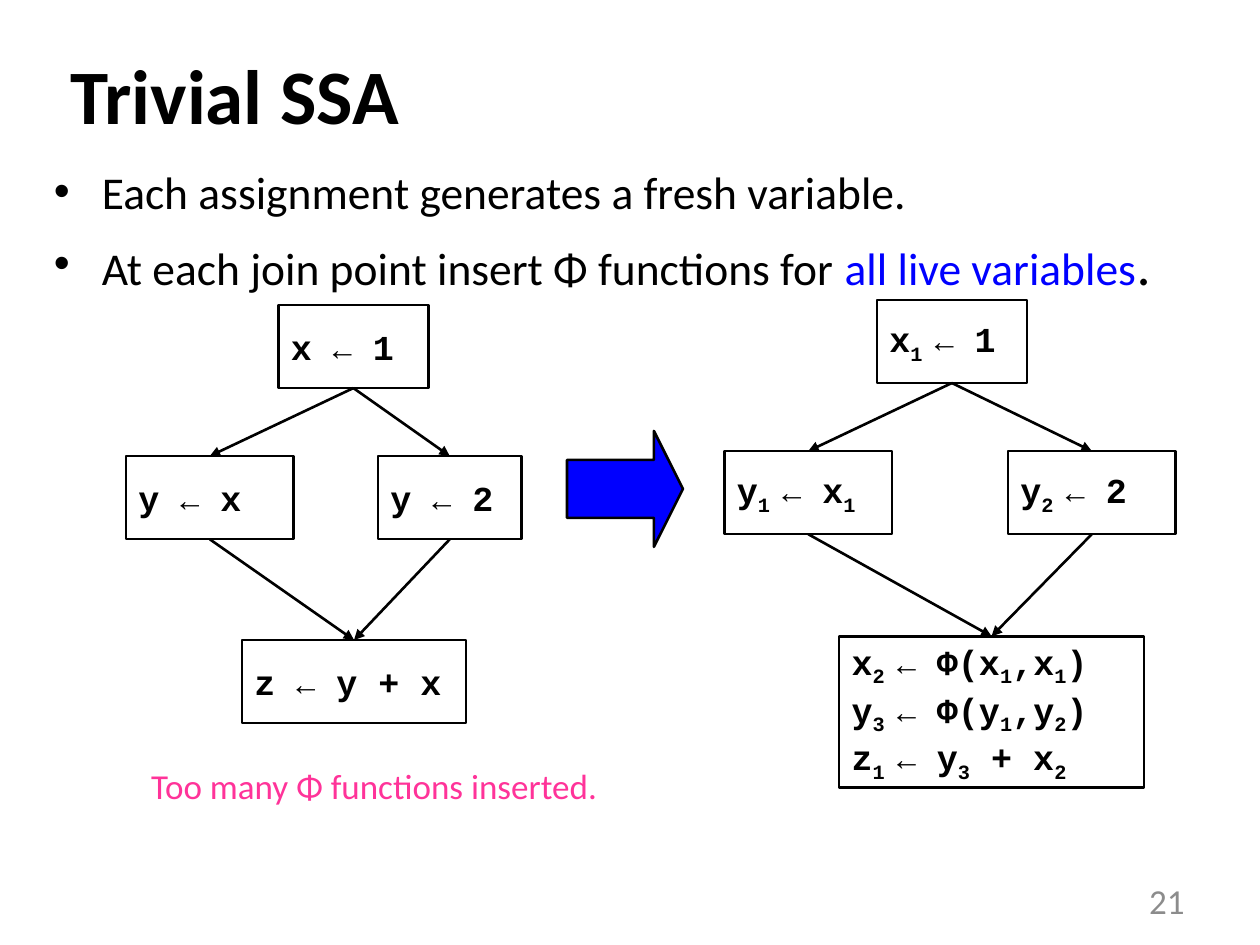
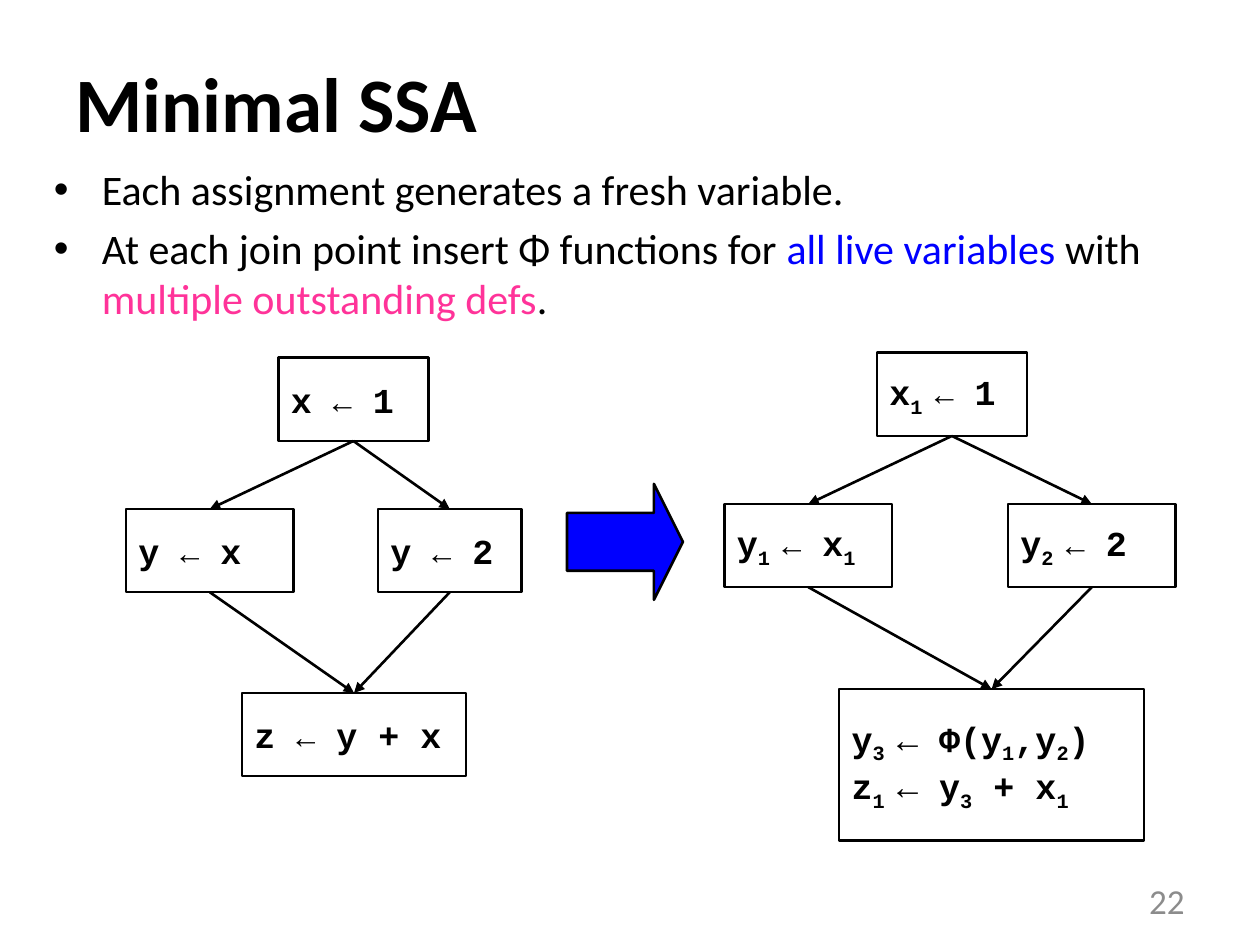
from dataclasses import dataclass

from lxml import etree
from pptx import Presentation
from pptx.dml.color import RGBColor
from pptx.enum import shapes, text
from pptx.oxml import ns
from pptx.util import Inches, Pt


@dataclass(frozen=True)
class Theme:
    sans: str = "Calibri"
    mono: str = "Courier New"
    black: str = "000000"
    blue: str = "0000FF"
    pink: str = "FF3399"
    grey: str = "8C8C8C"
    title_size: int = 44
    note_size: int = 20
    code_size: int = 20
    small_arrow: int = 18
    line_width: float = 1.5


THEME = Theme()

# A bullet is a list of runs: (text, colour, size or None for the slide's size).
FRESH = [("Each assignment generates a fresh variable.", THEME.black, None)]
INSERT = ("At each join point insert Φ functions for ", THEME.black, None)

SLIDES = [
    {
        "title": "Trivial SSA", "title_at": (0.46, 0.12), "number": 21,
        "bullet_size": 26,
        "bullets": [FRESH, [INSERT, ("all live variables", THEME.blue, None),
                            (".", THEME.black, 32)]],
        "drop": 0,
        "join": ["x_2 _← Φ(x_1_,x_1_)", "y_3 _← Φ(y_1_,y_2_)", "z_1 _← y_3_ + x_2"],
        "join_arrow": THEME.small_arrow,
        "caption": "Too many Φ functions inserted.",
    },
    {
        "title": "Minimal SSA", "title_at": (0.5, 0.18), "number": 22,
        "bullet_size": 24,
        "bullets": [FRESH, [INSERT, ("all live variables ", THEME.blue, None),
                            ("with ", THEME.black, None),
                            ("multiple outstanding defs", THEME.pink, None),
                            (".", THEME.black, None)]],
        "drop": 0.42,
        "join": ["y_3 _← Φ(y_1_,y_2_)", "z_1 _← y_3_ + x_1"],
        "join_arrow": THEME.code_size,
        "caption": None,
    },
]

# Flow graph blocks: lines of code, left, top, width, height.
# Underscores switch subscript on and off.
BLOCK_HEIGHT = 0.66
BEFORE = {
    "entry": (["x ← 1"], 2.21, 2.42, 1.19, BLOCK_HEIGHT),
    "left": (["y ← x"], 1, 3.62, 1.33, BLOCK_HEIGHT),
    "right": (["y ← 2"], 3, 3.62, 1.14, BLOCK_HEIGHT),
    "join": (["z ← y + x"], 1.92, 5.08, 1.78, BLOCK_HEIGHT),
}
AFTER = {
    "entry": (["x_1 _← 1"], 6.96, 2.38, 1.19, BLOCK_HEIGHT),
    "left": (["y_1 _← x_1"], 5.75, 3.58, 1.33, BLOCK_HEIGHT),
    "right": (["y_2 _← 2"], 8, 3.58, 1.33, BLOCK_HEIGHT),
}
JOIN_AFTER = (6.66, 5.05, 2.42, 1.2)
EDGES = [("entry", "left"), ("entry", "right"), ("right", "join"), ("left", "join")]
TOP, BOTTOM = 0, 2


def inches(*lengths):
    return [Inches(length) for length in lengths]


def add_xml(parent, tag, **attributes):
    return etree.SubElement(parent, ns.qn(tag), attributes)


def style(font, name, size, colour, bold=False):
    font.name, font.size, font.bold = name, Pt(size), bold
    font.color.rgb = RGBColor.from_string(colour)


def paragraphs_for(frame, items):
    """Yield each item with its own paragraph, using the empty first one."""
    for index, item in enumerate(items):
        yield frame.paragraphs[0] if index == 0 else frame.add_paragraph(), item


def add_text(slide, box, content, size, colour, bold=False, middle=True):
    """Add a wrapping one-paragraph text box."""
    frame = slide.shapes.add_textbox(*inches(*box)).text_frame
    frame.word_wrap = True
    if middle:
        frame.vertical_anchor = text.MSO_ANCHOR.MIDDLE
    paragraph = frame.paragraphs[0]
    paragraph.text = content
    style(paragraph.font, THEME.sans, size, colour, bold)
    return frame


def add_bullets(slide, bullets, size):
    frame = slide.shapes.add_textbox(*inches(0.33, 1.25, 9.33, 1.58)).text_frame
    frame.word_wrap = True
    indent = Inches(0.38)
    for paragraph, runs in paragraphs_for(frame, bullets):
        properties = paragraph._p.get_or_add_pPr()
        properties.set("marL", str(indent))
        properties.set("indent", str(-indent))
        add_xml(add_xml(properties, "a:spcBef"), "a:spcPct", val="20000")
        add_xml(properties, "a:buFont", typeface="Arial")
        add_xml(properties, "a:buChar", char="•")
        style(paragraph.font, THEME.sans, size, THEME.black)
        for content, colour, run_size in runs:
            run = paragraph.add_run()
            run.text = content
            run.font.color.rgb = RGBColor.from_string(colour)
            if run_size:
                run.font.size = Pt(run_size)


def add_code(paragraph, code, arrow_size):
    style(paragraph.font, THEME.mono, THEME.code_size, THEME.black, bold=True)
    for index, part in enumerate(code.split("_")):
        before, arrow, after = part.partition("←")
        for piece in filter(None, (before, arrow, after)):
            run = paragraph.add_run()
            run.text = piece
            if piece == "←":
                run.font.size = Pt(arrow_size)
            if index % 2:
                run._r.get_or_add_rPr().set("baseline", "-25000")


def outline(line):
    line.color.rgb = RGBColor.from_string(THEME.black)
    line.width = Pt(THEME.line_width)


def add_outlined(slide, kind, box):
    shape = slide.shapes.add_shape(kind, *inches(*box))
    shape.shadow.inherit = False
    outline(shape.line)
    return shape


def add_block(slide, lines, box, arrow_size):
    shape = add_outlined(slide, shapes.MSO_SHAPE.RECTANGLE, box)
    shape.fill.background()
    frame = shape.text_frame
    frame.word_wrap = False
    frame.vertical_anchor = text.MSO_ANCHOR.MIDDLE
    for paragraph, code in paragraphs_for(frame, lines):
        paragraph.alignment = text.PP_ALIGN.LEFT
        add_code(paragraph, code, arrow_size)
    return shape


def add_edge(slide, start, end):
    connector = slide.shapes.add_connector(shapes.MSO_CONNECTOR.STRAIGHT, 0, 0, 0, 0)
    connector.begin_connect(start, BOTTOM)
    connector.end_connect(end, TOP)
    outline(connector.line)
    add_xml(connector.line._get_or_add_ln(), "a:tailEnd", type="triangle")
    add_xml(connector.element.spPr, "a:effectLst")


def add_flow_graph(slide, blocks, drop, join_arrow):
    nodes = {}
    for name, (lines, left, top, width, height) in blocks.items():
        arrow_size = join_arrow if name == "join" else THEME.small_arrow
        nodes[name] = add_block(slide, lines, (left, top + drop, width, height), arrow_size)
    for start, end in EDGES:
        add_edge(slide, nodes[start], nodes[end])


def add_big_arrow(slide, drop):
    arrow = add_outlined(slide, shapes.MSO_SHAPE.RIGHT_ARROW, (4.5, 3.42 + drop, 0.92, 0.92))
    arrow.adjustments[0], arrow.adjustments[1] = 0.5, 0.25
    arrow.fill.solid()
    arrow.fill.fore_color.rgb = RGBColor.from_string(THEME.blue)


def add_caption(slide, content):
    frame = add_text(slide, (1, 5.92, 5.33, 0.64), content, THEME.note_size,
                     THEME.pink, middle=False)
    frame.margin_left = frame.margin_right = Inches(0.2)
    frame.margin_top = frame.margin_bottom = Inches(0.15)


def build_slide(presentation, content):
    slide = presentation.slides.add_slide(presentation.slide_layouts[6])
    number = add_text(slide, (7.17, 6.95, 2.33, 0.4), str(content["number"]),
                      THEME.note_size, THEME.grey)
    number.paragraphs[0].alignment = text.PP_ALIGN.RIGHT
    add_text(slide, (*content["title_at"], 9, 1.25), content["title"],
             THEME.title_size, THEME.black, bold=True)
    add_bullets(slide, content["bullets"], content["bullet_size"])

    drop = content["drop"]
    after = {**AFTER, "join": (content["join"], *JOIN_AFTER)}
    add_flow_graph(slide, BEFORE, drop, THEME.small_arrow)
    add_flow_graph(slide, after, drop, content["join_arrow"])
    add_big_arrow(slide, drop)
    if content["caption"]:
        add_caption(slide, content["caption"])


def main():
    presentation = Presentation()
    presentation.slide_width, presentation.slide_height = inches(10, 7.5)
    for content in SLIDES:
        build_slide(presentation, content)
    presentation.save("out.pptx")


if __name__ == "__main__":
    main()
